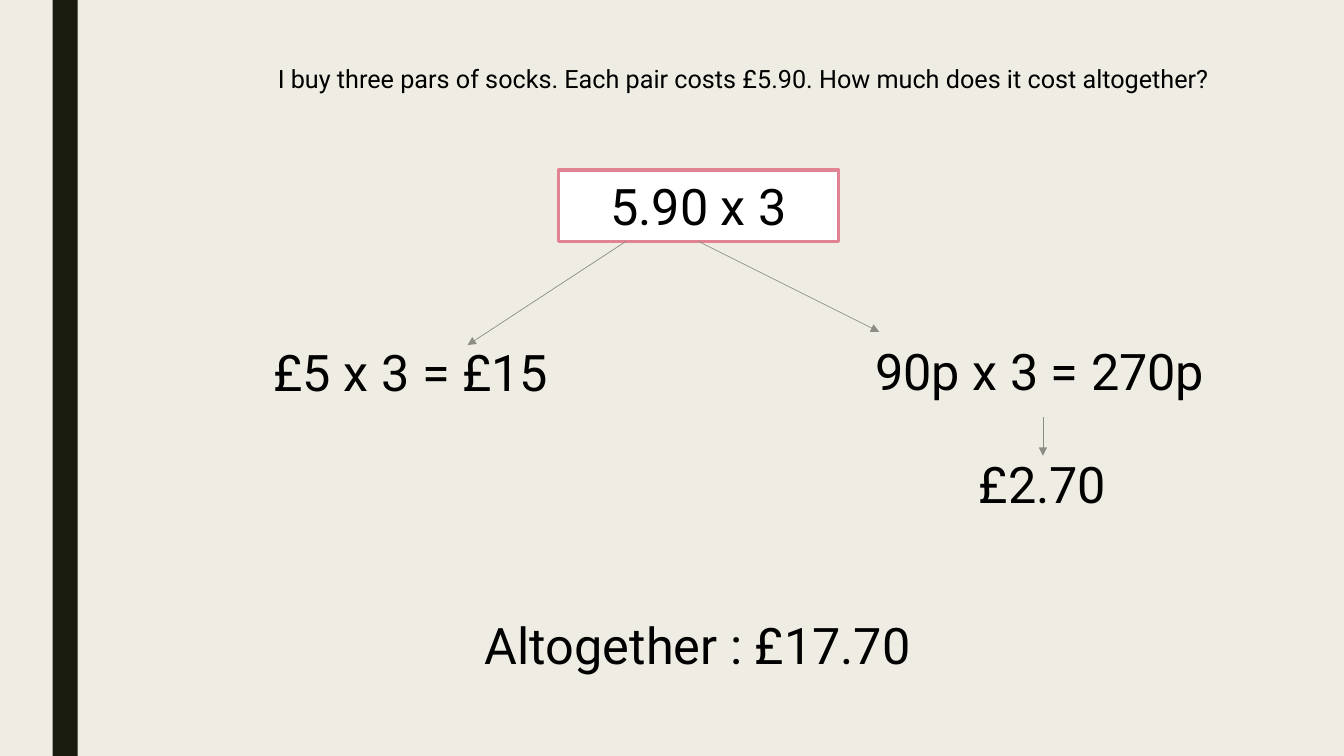
from pptx import Presentation
from pptx.dml.color import RGBColor
from pptx.enum.shapes import MSO_CONNECTOR as Conn, MSO_SHAPE as Shape
from pptx.enum.text import MSO_ANCHOR as Anchor, PP_ALIGN as Align
from pptx.oxml.ns import qn
from pptx.util import Pt
from lxml.etree import SubElement

THEME = {
    "font": "Roboto", "question": 18, "sum": 36,
    "background": "EFEDE3", "bar": "191B0E", "text": "000000",
    "box": "FFFFFF", "border": "E28394", "arrow": "8C8D86",
}
WIDTH, HEIGHT = 960, 540
BAR = (37.5, 0, 18, HEIGHT)
SUM_HEIGHT = 51
CALCULATION = ("5.90 x 3", 399, 121.5, 200)
QUESTION = ("I buy three pars of socks. Each pair costs £5.90. "
            "How much does it cost altogether?", 128, 42, 806, 29)
SUMS = [
    ("£5 x 3 = £15", 173.5, 240, 240),
    ("90p x 3 = 270p", 607, 239.5, 271.5),
    ("£2.70", 609, 320, 271.5),
    ("Altogether : £17.70", 166, 435, 665),
]
BOX_BOTTOM = CALCULATION[2] + SUM_HEIGHT
BOX_MIDDLE = CALCULATION[1] + CALCULATION[3] / 2
POUNDS_ARROW = (447, BOX_BOTTOM, 334, 246.5)
PENCE_ARROW = (BOX_MIDDLE, BOX_BOTTOM, 628, 237)
CONVERT_ARROW = (745, 298, 745, 325.5)


def color(name):
    return RGBColor.from_string(THEME[name])


def add_rect(box, fill, line=None):
    sp = slide.shapes.add_shape(Shape.RECTANGLE, *map(Pt, box))
    sp.shadow.inherit = False
    sp.fill.solid()
    sp.fill.fore_color.rgb = color(fill)
    if line:
        sp.line.color.rgb = color(line)
        sp.line.width = Pt(2.75)
    else:
        sp.line.fill.background()
    return sp


def write(text, box=None, sp=None, size="sum"):
    sp = sp or slide.shapes.add_textbox(*map(Pt, box))
    tf = sp.text_frame
    tf.word_wrap = True
    tf.vertical_anchor = Anchor.TOP
    p = tf.paragraphs[0]
    p.alignment = Align.CENTER
    r = p.add_run()
    r.text = text
    r.font.name = THEME["font"]
    r.font.size = Pt(THEME[size])
    r.font.color.rgb = color("text")


def add_arrow(ends):
    line = slide.shapes.add_connector(Conn.STRAIGHT, *map(Pt, ends))
    line.line.color.rgb = color("arrow")
    line.line.width = Pt(0.5)
    SubElement(line.line._get_or_add_ln(), qn("a:tailEnd"), type="triangle")
    SubElement(line._element.spPr, qn("a:effectLst"))
    return line


prs = Presentation()
prs.slide_width, prs.slide_height = Pt(WIDTH), Pt(HEIGHT)
slide = prs.slides.add_slide(prs.slide_layouts[6])
slide.background.fill.solid()
slide.background.fill.fore_color.rgb = color("background")

add_rect(BAR, "bar")
text, *place = CALCULATION
calculation = add_rect((*place, SUM_HEIGHT), "box", "border")
write(text, sp=calculation)

text, *place = QUESTION
write(text, place, size="question")
for text, *place in SUMS:
    write(text, (*place, SUM_HEIGHT))

add_arrow(POUNDS_ARROW)
add_arrow(PENCE_ARROW).begin_connect(calculation, 2)
add_arrow(CONVERT_ARROW)

prs.save("out.pptx")
